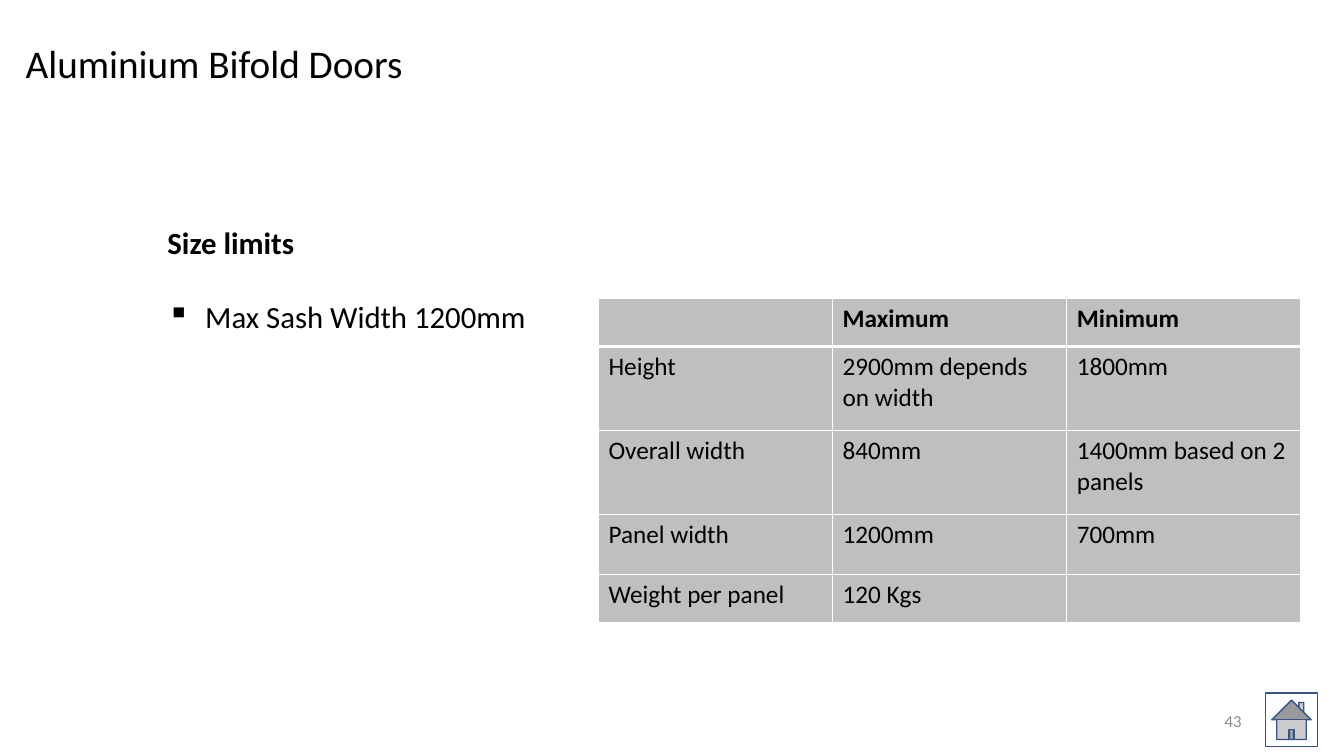
from lxml import etree
from pptx import Presentation
from pptx.dml.color import RGBColor
from pptx.enum.shapes import MSO_SHAPE
from pptx.enum.text import MSO_ANCHOR, MSO_AUTO_SIZE, PP_ALIGN
from pptx.oxml import parse_xml
from pptx.oxml.ns import nsdecls, qn
from pptx.util import Pt

PX = 9525  # EMU per px, 96 px to the inch
HOME_BUTTON = MSO_SHAPE.ACTION_BUTTON_HOME
MIDDLE = MSO_ANCHOR.MIDDLE
GROW = MSO_AUTO_SIZE.SHAPE_TO_FIT_TEXT
LEFT, RIGHT = PP_ALIGN.LEFT, PP_ALIGN.RIGHT
COLORS = {"text": "000000", "number": "8C8C8C", "cell": "BFBFBF",
          "white": "FFFFFF", "button_line": "325491"}


def color(name):
    return RGBColor.from_string(COLORS[name])


def write(paragraph, text, size=18, bold=False, tone="text", align=LEFT):
    paragraph.alignment = align
    run = paragraph.add_run()
    run.text = text
    run.font.name = "Calibri"
    run.font.size = Pt(size)
    run.font.bold = bold
    run.font.color.rgb = color(tone)


deck = Presentation()
deck.slide_width, deck.slide_height = 1280 * PX, 720 * PX
slide = deck.slides.add_slide(deck.slide_layouts[6])
shapes = slide.shapes

# Page number
page_number = shapes.add_textbox(904 * PX, 667 * PX, 288 * PX, 38 * PX).text_frame
page_number.word_wrap = True
page_number.vertical_anchor = MIDDLE
write(page_number.paragraphs[0], "43", size=12, tone="number", align=RIGHT)

# Table of size limits
limits = [
    ("", "Maximum", "Minimum"),
    ("Height", "2900mm depends on width", "1800mm"),
    ("Overall width", "840mm", "1400mm based on 2 panels"),
    ("Panel width", "1200mm", "700mm"),
    ("Weight per panel", "120 Kgs", ""),
]
row_heights = [46, 80, 80, 57, 46]
column_width = 223
table = shapes.add_table(len(limits), 3, 570 * PX, 284 * PX,
                         3 * column_width * PX, sum(row_heights) * PX).table
for column in table.columns:
    column.width = column_width * PX

for row, (values, height) in enumerate(zip(limits, row_heights)):
    table.rows[row].height = height * PX
    for col, value in enumerate(values):
        cell = table.cell(row, col)
        cell.fill.solid()
        cell.fill.fore_color.rgb = color("cell")
        if value:
            write(cell.text_frame.paragraphs[0], value, bold=row == 0)
        # White borders, thicker below the header
        for place, side in enumerate("LRTB"):
            below_header = (row, side) in ((0, "B"), (1, "T"))
            width = Pt(3 if below_header else 1)
            cell._tc.get_or_add_tcPr().insert(place, parse_xml(
                f'<a:ln{side} {nsdecls("a")} w="{width}"><a:solidFill>'
                f'<a:srgbClr val="{COLORS["white"]}"/></a:solidFill></a:ln{side}>'))

# Size limits heading and bullet
size_limits = shapes.add_textbox(150 * PX, 208 * PX, 364 * PX, 152 * PX).text_frame
size_limits.word_wrap = False
size_limits.auto_size = GROW
write(size_limits.paragraphs[0], "Size limits", size=22, bold=True)
sash_width = size_limits.add_paragraph()
sash_width.space_before = Pt(27)
bullet_format = sash_width._p.get_or_add_pPr()
bullet_format.set("marL", str(36 * PX))
bullet_format.set("indent", str(-36 * PX))
etree.SubElement(bullet_format, qn("a:buChar")).set("char", "▪")
write(sash_width, "Max Sash Width 1200mm", size=22)

# Title
title = shapes.add_textbox(15 * PX, 33 * PX, 391 * PX, 55 * PX).text_frame
title.word_wrap = False
title.auto_size = GROW
write(title.paragraphs[0], "Aluminium Bifold Doors", size=28)

# Home button
home = shapes.add_shape(HOME_BUTTON, 1205 * PX, 660 * PX, 50 * PX, 51 * PX)
home.shadow.inherit = False
home.fill.solid()
home.fill.fore_color.rgb = color("white")
home.line.color.rgb = color("button_line")
home.line.width = Pt(1)

deck.save("out.pptx")
